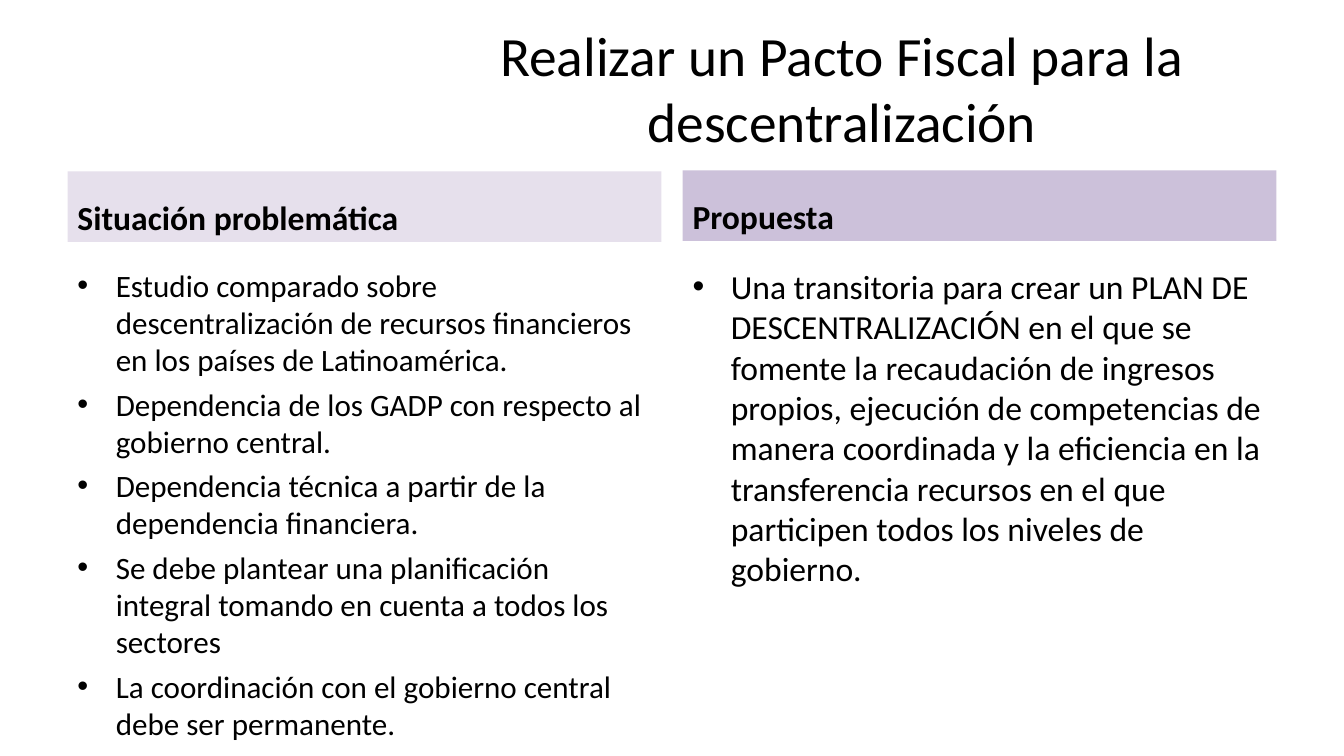
from lxml import etree
from pptx import Presentation
from pptx import util as u
from pptx.dml.color import RGBColor
from pptx.enum import shapes, text
from pptx.oxml.ns import qn

FONT = "Calibri"
COLORS = {"ink": "000000", "pale": "E6E0EC", "mauve": "CCC1DA"}
WIDTH = 5.89
ISSUES = [
    "Estudio comparado sobre descentralización de recursos financieros en los países de Latinoamérica.",
    "Dependencia de los GADP con respecto al gobierno central.",
    "Dependencia técnica a partir de la dependencia financiera.",
    "Se debe plantear una planificación integral tomando en cuenta a todos los sectores",
    "La coordinación con el gobierno central debe ser permanente.",
]
PLAN = [
    "Una transitoria para crear un PLAN DE DESCENTRALIZACIÓN en el que se fomente "
    "la recaudación de ingresos propios, ejecución de competencias de manera coordinada "
    "y la eficiencia en la transferencia recursos en el que participen todos los niveles "
    "de gobierno.",
]


def color(name):
    return RGBColor.from_string(COLORS[name])


def style(para, size, bold=False):
    for run in para.runs:
        run.font.name = FONT
        run.font.size = u.Pt(size)
        run.font.bold = bold
        run.font.color.rgb = color("ink")


def bullet(para):
    props = para._p.get_or_add_pPr()
    props.set("marL", str(u.Inches(0.38)))
    props.set("indent", str(u.Inches(-0.38)))
    etree.SubElement(props, qn("a:buFont")).set("typeface", "Arial")
    etree.SubElement(props, qn("a:buChar")).set("char", "•")


def add_title(slide, left, top, width, height):
    title = slide.shapes.title
    title.left, title.top = u.Inches(left), u.Inches(top)
    title.width, title.height = u.Inches(width), u.Inches(height)
    frame = title.text_frame
    frame.text = "Realizar un Pacto Fiscal para la descentralización"
    frame.word_wrap = True
    frame.auto_size = text.MSO_AUTO_SIZE.NONE
    frame.vertical_anchor = text.MSO_ANCHOR.MIDDLE
    para = frame.paragraphs[0]
    para.alignment = text.PP_ALIGN.CENTER
    style(para, 39.6)


def add_head(slide, left, top, width, height, label, fill):
    head = slide.shapes.add_shape(
        shapes.MSO_SHAPE.RECTANGLE,
        u.Inches(left), u.Inches(top), u.Inches(width), u.Inches(height))
    head.shadow.inherit = False
    head.fill.solid()
    head.fill.fore_color.rgb = color(fill)
    head.line.fill.background()
    frame = head.text_frame
    frame.text = label
    frame.word_wrap = True
    frame.vertical_anchor = text.MSO_ANCHOR.BOTTOM
    para = frame.paragraphs[0]
    para.alignment = text.PP_ALIGN.LEFT
    style(para, 24, bold=True)


def add_list(slide, left, top, width, height, items, size):
    box = slide.shapes.add_textbox(
        u.Inches(left), u.Inches(top), u.Inches(width), u.Inches(height))
    frame = box.text_frame
    frame.word_wrap = True
    for i, item in enumerate(items):
        para = frame.add_paragraph() if i else frame.paragraphs[0]
        para.text = item
        if i:
            para.space_before = u.Pt(5)
        bullet(para)
        style(para, size)


def add_column(slide, left, top, label, fill, items, size):
    """Place a heading band with its bullet list below."""
    add_head(slide, left, top, WIDTH, 0.7, label, fill)
    add_list(slide, left, 2.59, WIDTH, 4.11, items, size)


def main():
    deck = Presentation()
    deck.slide_width, deck.slide_height = u.Inches(13.33), u.Inches(7.5)
    slide = deck.slides.add_slide(deck.slide_layouts[5])
    add_title(slide, 4.04, 0.24, 8.62, 1.25)
    add_column(slide, 0.67, 1.7, "Situación problemática", "pale", ISSUES, 22.2)
    add_column(slide, 6.77, 1.69, "Propuesta", "mauve", PLAN, 24)
    deck.save("out.pptx")


if __name__ == "__main__":
    main()
